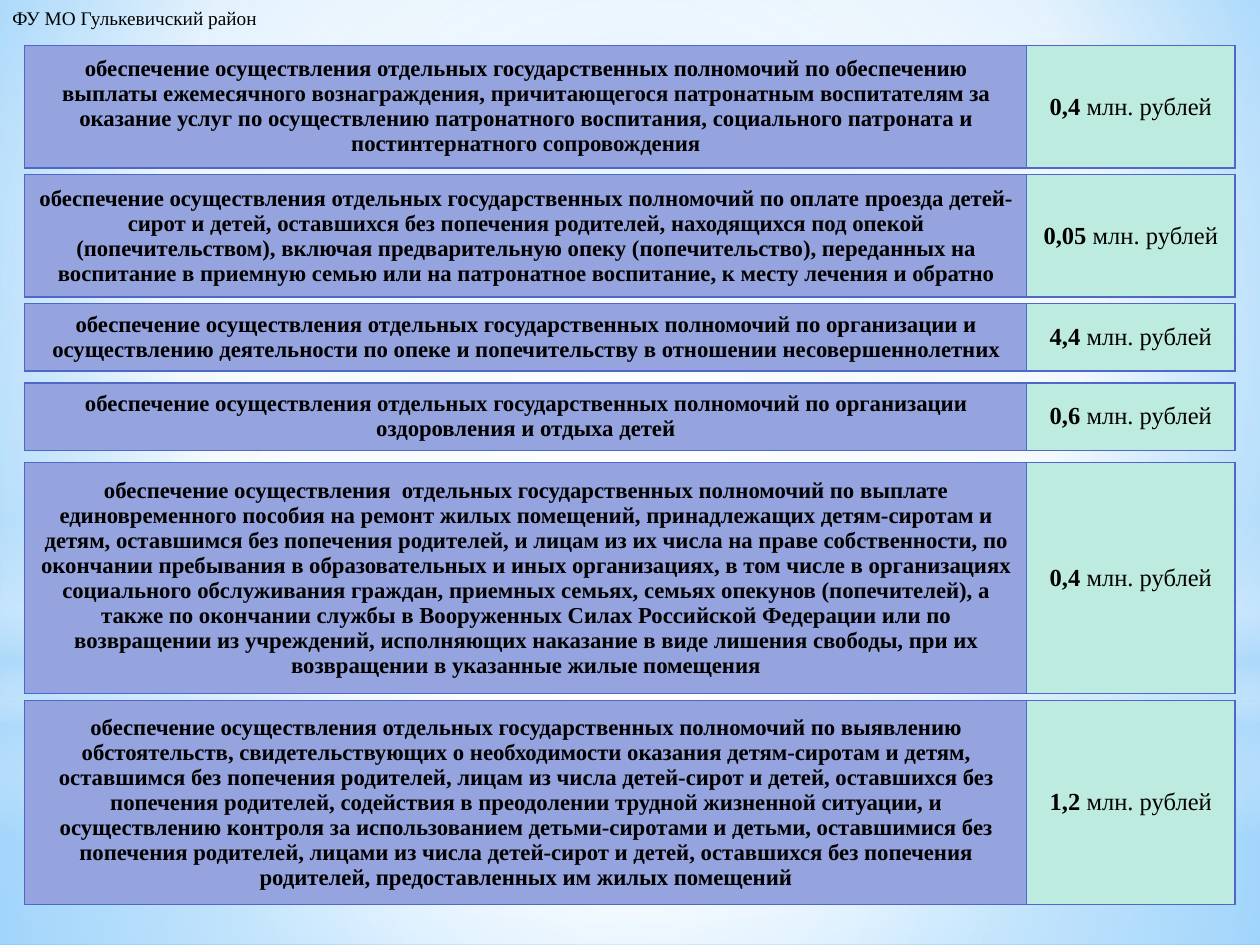
from lxml.etree import SubElement
from pptx import Presentation
from pptx.dml.color import RGBColor
from pptx.enum.shapes import MSO_SHAPE
from pptx.enum.text import MSO_ANCHOR, MSO_AUTO_SIZE, PP_ALIGN
from pptx.oxml.ns import qn
from pptx.util import Pt

FONT = "Times New Roman"
LEFT, PURPOSE_WIDTH, AMOUNT_WIDTH = 14.1, 572.5, 119.2


def color(hex_value):
    return RGBColor.from_string(hex_value)


def paint_gradient(fill, element, stops, focus=None):
    """Stops are (position, colour, opacity) in percent; focus is left, top, right, bottom.

    Without a focus the gradient runs straight down.
    """
    fill.gradient()
    gradient = element.find(".//" + qn("a:gradFill"))
    for part in list(gradient):
        gradient.remove(part)
    stop_list = SubElement(gradient, qn("a:gsLst"))
    for position, hex_value, opacity in stops:
        stop = SubElement(stop_list, qn("a:gs"), pos=str(position * 1000))
        stop_color = SubElement(stop, qn("a:srgbClr"), val=hex_value)
        if opacity < 100:
            SubElement(stop_color, qn("a:alpha"), val=str(opacity * 1000))
    if focus:
        circle = SubElement(gradient, qn("a:path"), path="circle")
        sides = {side: str(value * 1000) for side, value in zip("ltrb", focus)}
        SubElement(circle, qn("a:fillToRect"), **sides)
    else:
        SubElement(gradient, qn("a:lin"), ang="5400000", scaled="0")


presentation = Presentation()
presentation.slide_width, presentation.slide_height = Pt(720), Pt(540)
slide = presentation.slides.add_slide(presentation.slide_layouts[6])

# Sky: background and four translucent layers
paint_gradient(slide.background.fill, slide.element,
               [(0, "9ED5FF", 100), (60, "FFFFFF", 100), (100, "5BB9FF", 100)],
               (20, 10, 20, 60))

CENTER = (50, 50, 50, 50)
sky_layers = [
    (MSO_SHAPE.RECTANGLE, 402, 138, CENTER,
     [(0, "FFFFFF", 91), (37, "FFFFFF", 76), (100, "B4DCFA", 79)]),
    (MSO_SHAPE.RECTANGLE, 0, 402, CENTER,
     [(0, "FFFFFF", 89), (48, "FFFFFF", 62), (100, "B4DCFA", 79)]),
    (MSO_SHAPE.RECTANGLE, 297, 180, None,
     [(0, "FFFFFF", 0), (29, "FFFFFF", 30), (45, "B4DCFA", 40),
      (55, "FFFFFF", 26), (65, "B4DCFA", 60), (100, "FFFFFF", 0)]),
    (MSO_SHAPE.OVAL, 126, 402, CENTER,
     [(0, "FFFFFF", 100), (56, "FFFFFF", 0)]),
]
for outline, top, height, focus, stops in sky_layers:
    layer = slide.shapes.add_shape(outline, 0, Pt(top), Pt(720), Pt(height))
    layer.shadow.inherit = False
    layer.line.fill.background()
    paint_gradient(layer.fill, layer.element, stops, focus)

# Name of the department
department = slide.shapes.add_textbox(0, 0, Pt(157), Pt(20.6)).text_frame
department.word_wrap = False
department.auto_size = MSO_AUTO_SIZE.SHAPE_TO_FIT_TEXT
department_line = department.paragraphs[0]
department_line.text = "ФУ МО Гулькевичский район"
department_line.font.name = FONT
department_line.font.size = Pt(11)
department_line.font.color.rgb = color("000000")

# Spending: top, height, purpose, amount in millions
COMMON_START = "обеспечение осуществления"
spending = [
    (26, 70, " отдельных государственных полномочий по обеспечению выплаты "
     "ежемесячного вознаграждения, причитающегося патронатным воспитателям за "
     "оказание услуг по осуществлению патронатного воспитания, социального "
     "патроната и постинтернатного сопровождения", "0,4"),
    (99.8, 70, " отдельных государственных полномочий по оплате проезда детей-сирот "
     "и детей, оставшихся без попечения родителей, находящихся под опекой "
     "(попечительством), включая предварительную опеку (попечительство), "
     "переданных на воспитание в приемную семью или на патронатное воспитание, "
     "к месту лечения и обратно", "0,05"),
    (173.5, 38.5, " отдельных государственных полномочий по организации и "
     "осуществлению деятельности по опеке и попечительству в отношении "
     "несовершеннолетних", "4,4"),
    (218.8, 38.5, " отдельных государственных полномочий по организации "
     "оздоровления и отдыха детей", "0,6"),
    (264.2, 132, "  отдельных государственных полномочий по выплате единовременного "
     "пособия на ремонт жилых помещений, принадлежащих детям-сиротам и детям, "
     "оставшимся без попечения родителей, и лицам из их числа на праве "
     "собственности, по окончании пребывания в образовательных и иных "
     "организациях, в том числе в организациях социального обслуживания граждан, "
     "приемных семьях, семьях опекунов (попечителей), а также по окончании службы "
     "в Вооруженных Силах Российской Федерации или по возвращении из учреждений, "
     "исполняющих наказание в виде лишения свободы, при их возвращении в "
     "указанные жилые помещения", "0,4"),
    (400.3, 107, " отдельных государственных полномочий по выявлению обстоятельств, "
     "свидетельствующих о необходимости оказания детям-сиротам и детям, "
     "оставшимся без попечения родителей, лицам из числа детей-сирот и детей, "
     "оставшихся без попечения родителей, содействия в преодолении трудной "
     "жизненной ситуации, и осуществлению контроля за использованием "
     "детьми-сиротами и детьми, оставшимися без попечения родителей, лицами из "
     "числа детей-сирот и детей, оставшихся без попечения родителей, "
     "предоставленных им жилых помещений", "1,2"),
]
for top, height, purpose, amount in spending:
    table = slide.shapes.add_table(1, 2, Pt(LEFT), Pt(top),
                                   Pt(PURPOSE_WIDTH + AMOUNT_WIDTH), Pt(height)).table
    table.first_row = table.horz_banding = False
    table.columns[0].width = Pt(PURPOSE_WIDTH)
    table.columns[1].width = Pt(AMOUNT_WIDTH)

    cells = [
        ([(COMMON_START + purpose, True)], 13, "95A4DE"),
        ([(amount, True), (" млн. рублей", False)], 14, "BEEBDF"),
    ]
    for column, (wording, size, background) in enumerate(cells):
        cell = table.cell(0, column)
        cell.vertical_anchor = MSO_ANCHOR.MIDDLE
        properties = cell._tc.get_or_add_tcPr()
        for side in ("lnL", "lnR", "lnT", "lnB"):
            border = SubElement(properties, qn("a:" + side), w=str(Pt(1)))
            border_fill = SubElement(border, qn("a:solidFill"))
            SubElement(border_fill, qn("a:srgbClr"), val="4E67C8")
        cell.fill.solid()
        cell.fill.fore_color.rgb = color(background)

        paragraph = cell.text_frame.paragraphs[0]
        paragraph.alignment = PP_ALIGN.CENTER
        paragraph.font.name = FONT
        paragraph.font.size = Pt(size)
        paragraph.font.color.rgb = color("000000")
        for words, bold in wording:
            run = paragraph.add_run()
            run.text = words
            run.font.bold = bold

presentation.save("out.pptx")
